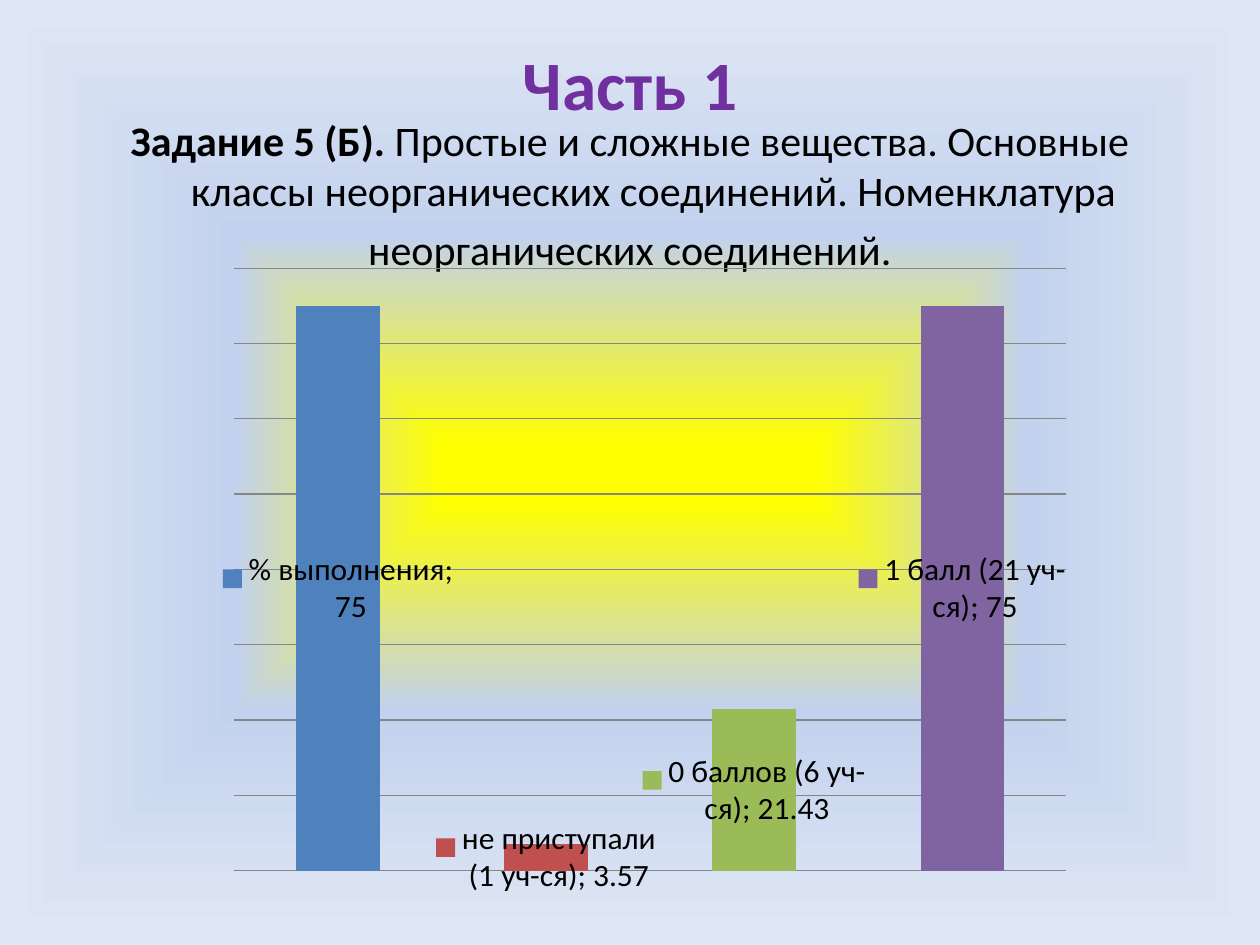
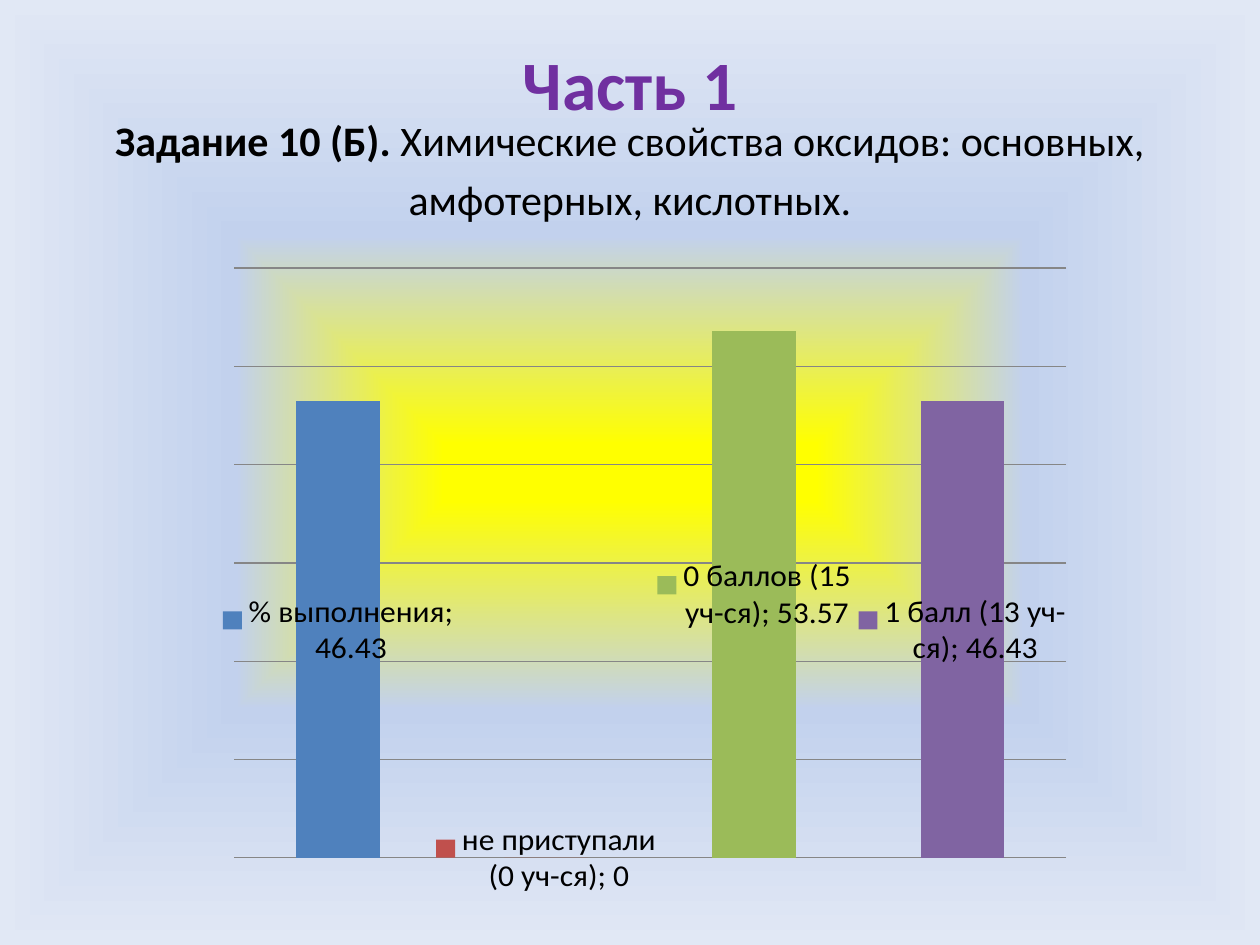
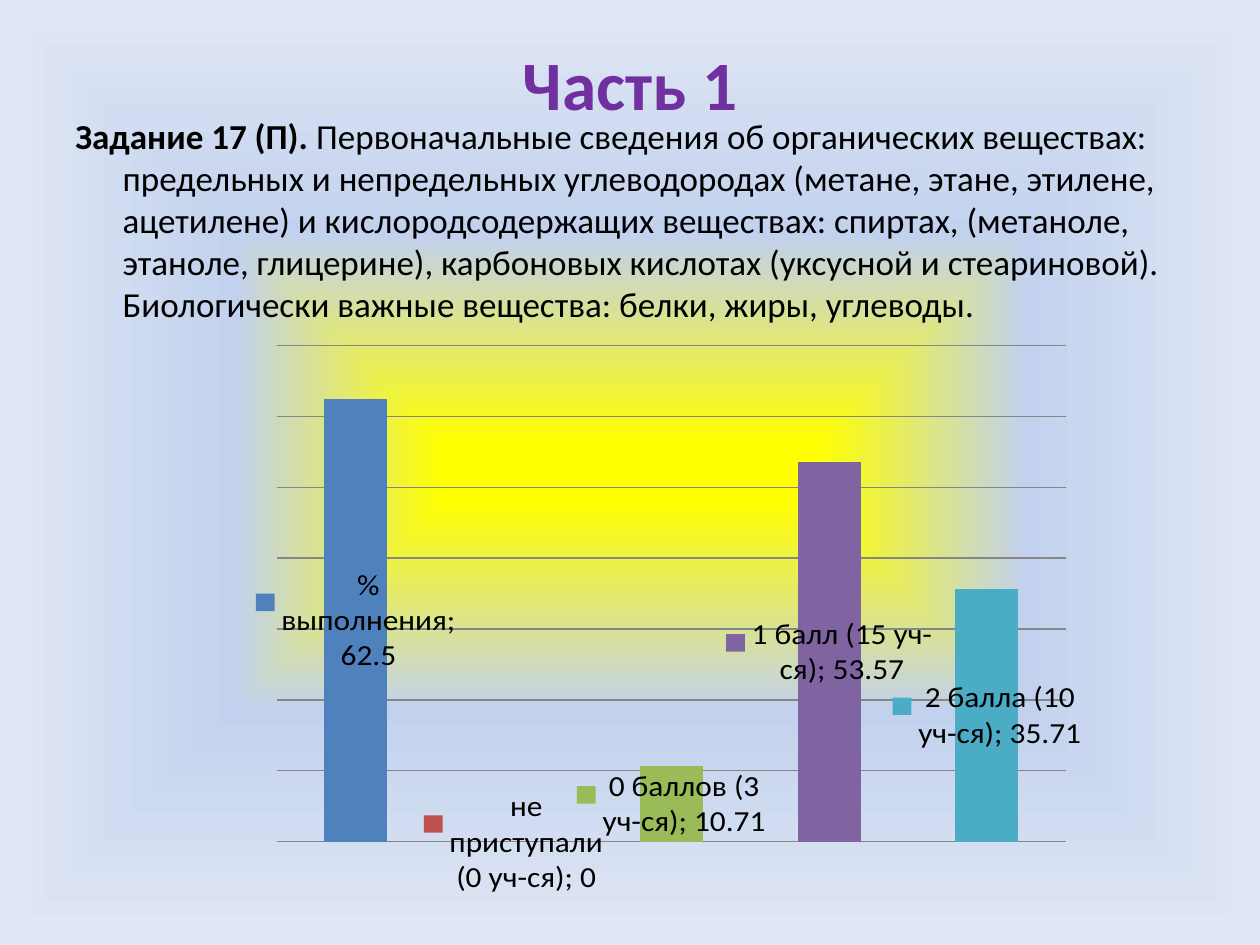
"""Build three slides of exam task results, each with a column chart."""

from dataclasses import dataclass

import lxml.etree
import pptx
import pptx.chart.data
import pptx.dml.color
import pptx.enum.chart
import pptx.enum.text
import pptx.oxml.ns
import pptx.util

Pt = pptx.util.Pt
RGBColor = pptx.dml.color.RGBColor
PP_ALIGN = pptx.enum.text.PP_ALIGN
qn = pptx.oxml.ns.qn

FONT = "Calibri"
PURPLE = RGBColor(0x70, 0x30, 0xA0)
BLACK = RGBColor(0, 0, 0)
GRID = RGBColor(0x86, 0x86, 0x86)
YELLOW = RGBColor(0xFF, 0xFF, 0x00)
LIGHT_BLUE = RGBColor(0xC2, 0xD1, 0xED)
PALE_BLUE = RGBColor(0xE1, 0xE8, 0xF5)
BARS = [
    RGBColor(0x4F, 0x81, 0xBD),
    RGBColor(0xC0, 0x50, 0x4D),
    RGBColor(0x9B, 0xBB, 0x59),
    RGBColor(0x80, 0x64, 0xA2),
    RGBColor(0x4B, 0xAC, 0xC6),
]
HANGING = Pt(27)


@dataclass
class Box:
    """A place on the slide, in points."""

    x: float
    y: float
    w: float
    h: float

    def lengths(self) -> list:
        """Return left, top, width and height as lengths."""
        return [Pt(v) for v in (self.x, self.y, self.w, self.h)]


@dataclass
class Task:
    """One exam task with its topic and results."""

    label: str
    topic: list[str]
    size: float
    align: PP_ALIGN
    chart: Box
    results: dict[str, float]


TITLE = Box(36, 21.6, 648, 51.84)
BODY = Box(36, 61.92, 648, 420.48)
WIDE_CHART = Box(123.84, 146.16, 495.36, 365.04)
LOW_CHART = Box(146.16, 191.52, 472.32, 319.68)

TASKS = [
    Task(
        "Задание 5 (Б). ",
        [
            "Простые и сложные вещества. Основные классы неорганических "
            "соединений. Номенклатура",
            "неорганических соединений.",
        ],
        24, PP_ALIGN.CENTER, WIDE_CHART,
        {
            "% выполнения": 75,
            "не приступали (1 уч-ся)": 3.57,
            "0 баллов (6 уч-ся)": 21.43,
            "1 балл (21 уч-ся)": 75,
        },
    ),
    Task(
        "Задание 10 (Б). ",
        ["Химические свойства оксидов: основных,", "амфотерных, кислотных."],
        24, PP_ALIGN.CENTER, WIDE_CHART,
        {
            "% выполнения": 46.43,
            "не приступали (0 уч-ся)": 0,
            "0 баллов (15 уч-ся)": 53.57,
            "1 балл (13 уч-ся)": 46.43,
        },
    ),
    Task(
        "Задание 17 (П). ",
        [
            "Первоначальные сведения об органических веществах: предельных и "
            "непредельных углеводородах (метане, этане, этилене, ацетилене) и "
            "кислородсодержащих веществах: спиртах, (метаноле, этаноле, "
            "глицерине), карбоновых кислотах (уксусной и стеариновой). "
            "Биологически важные вещества: белки, жиры, углеводы.",
        ],
        20, PP_ALIGN.LEFT, LOW_CHART,
        {
            "% выполнения": 62.5,
            "не приступали (0 уч-ся)": 0,
            "0 баллов (3 уч-ся)": 10.71,
            "1 балл (15 уч-ся)": 53.57,
            "2 балла (10 уч-ся)": 35.71,
        },
    ),
]


def set_background(master) -> None:
    """Give the master a gradient that spreads from the centre."""
    master.background.fill.gradient()
    grad = master.element.find(f".//{qn('p:bg')}//{qn('a:gradFill')}")
    for child in list(grad):
        grad.remove(child)
    stops = lxml.etree.SubElement(grad, qn("a:gsLst"))
    for pos, color, alpha in ((6, YELLOW, 80), (50, LIGHT_BLUE, 100), (100, PALE_BLUE, 100)):
        stop = lxml.etree.SubElement(stops, qn("a:gs"), pos=str(pos * 1000))
        clr = lxml.etree.SubElement(stop, qn("a:srgbClr"), val=str(color))
        if alpha < 100:
            lxml.etree.SubElement(clr, qn("a:alpha"), val=str(alpha * 1000))
    shade = lxml.etree.SubElement(grad, qn("a:path"), {"path": "shape"})
    sides = {side: "50000" for side in "ltrb"}
    lxml.etree.SubElement(shade, qn("a:fillToRect"), sides)


def style_run(r, size: float, color: RGBColor, bold: bool) -> None:
    """Set the font of a run."""
    r.font.name = FONT
    r.font.size = Pt(size)
    r.font.color.rgb = color
    r.font.bold = bold


def add_text_frame(s, box: Box):
    """Add a wrapping text box and return its text frame."""
    tf = s.shapes.add_textbox(*box.lengths()).text_frame
    tf.word_wrap = True
    return tf


def add_title(s, text: str) -> None:
    """Add the slide title."""
    tf = add_text_frame(s, TITLE)
    tf.vertical_anchor = pptx.enum.text.MSO_ANCHOR.MIDDLE
    tf.text = text
    p = tf.paragraphs[0]
    p.alignment = PP_ALIGN.CENTER
    style_run(p.runs[0], 39.6, PURPLE, True)


def add_topic(s, task: Task) -> None:
    """Add the task label and its topic with a hanging indent."""
    tf = add_text_frame(s, BODY)
    tf.text = "\n".join([task.label + task.topic[0], *task.topic[1:]])
    first = tf.paragraphs[0]
    first.text = task.label
    first.add_run().text = task.topic[0]
    for p in tf.paragraphs:
        p.alignment = task.align
        p.space_before = Pt(task.size * 0.2)
        pPr = p._p.get_or_add_pPr()
        pPr.set("marL", str(HANGING))
        pPr.set("indent", str(-HANGING))
        for r in p.runs:
            style_run(r, task.size, BLACK, r.text == task.label)


def add_results(s, task: Task) -> None:
    """Add the column chart of results."""
    data = pptx.chart.data.CategoryChartData()
    data.categories = list(task.results)
    data.add_series("Series 1", list(task.results.values()))
    kind = pptx.enum.chart.XL_CHART_TYPE.COLUMN_STACKED
    chart = s.shapes.add_chart(kind, *task.chart.lengths(), data).chart
    chart.has_title = False
    chart.has_legend = False
    chart.font.name = FONT
    chart.font.size = Pt(18)
    chart.font.color.rgb = BLACK
    chart.category_axis.visible = False
    chart.value_axis.visible = False
    chart.value_axis.has_major_gridlines = True
    line = chart.value_axis.major_gridlines.format.line
    line.color.rgb = GRID
    line.width = Pt(0.75)

    plot = chart.plots[0]
    plot.gap_width = 150
    plot.overlap = 100
    plot.vary_by_categories = True
    for i, color in zip(range(len(task.results)), BARS):
        fill = plot.series[0].points[i].format.fill
        fill.solid()
        fill.fore_color.rgb = color

    labels = plot.series[0].data_labels
    labels.show_legend_key = True
    labels.show_value = True
    labels.show_category_name = True
    labels.show_percentage = True
    separator = lxml.etree.Element(qn("c:separator"))
    separator.text = "; "
    labels._element.find(qn("c:showBubbleSize")).addnext(separator)


def main() -> None:
    """Build and save the presentation."""
    prs = pptx.Presentation()
    prs.slide_width, prs.slide_height = Pt(720), Pt(540)
    set_background(prs.slide_master)
    for task in TASKS:
        s = prs.slides.add_slide(prs.slide_layouts[6])
        add_title(s, "Часть 1")
        add_topic(s, task)
        add_results(s, task)
    prs.save("out.pptx")


if __name__ == "__main__":
    main()
